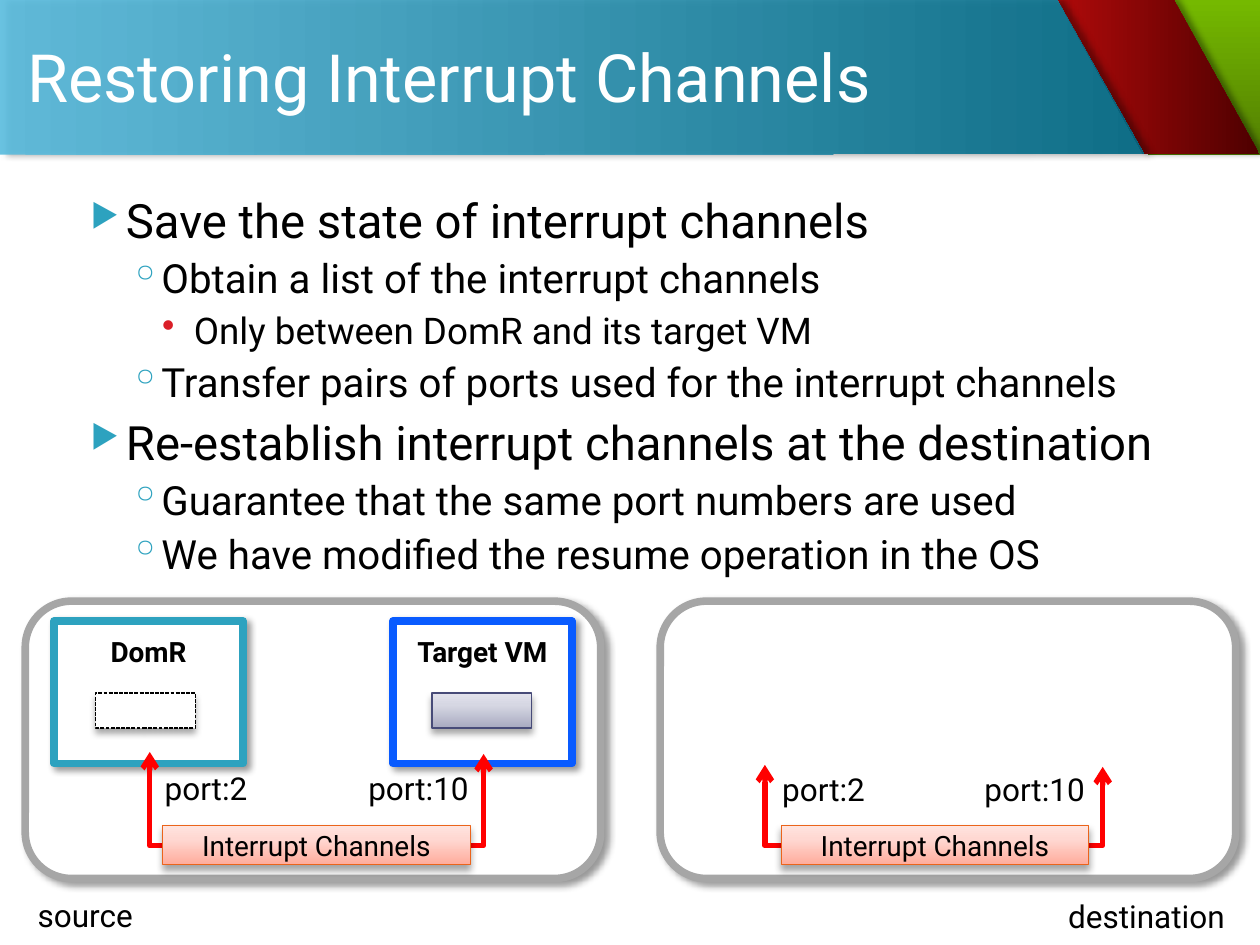
from typing import NamedTuple, Optional

from lxml import etree
from pptx import Presentation
from pptx.dml.color import RGBColor
from pptx.enum.dml import MSO_LINE
from pptx.enum.shapes import MSO_CONNECTOR as Conn, MSO_SHAPE as Shape
from pptx.enum.text import MSO_ANCHOR as Anchor, PP_ALIGN as Align
from pptx.oxml import parse_xml
from pptx.oxml.ns import nsdecls, qn
from pptx.util import Cm, Pt

FONT = "Roboto"
BLACK, WHITE = RGBColor(0x00, 0x00, 0x00), RGBColor(0xFF, 0xFF, 0xFF)
GREY, TEAL = RGBColor(0xA6, 0xA6, 0xA6), RGBColor(0x2D, 0xA2, 0xBF)
BLUE, INDIGO = RGBColor(0x09, 0x5B, 0xFF), RGBColor(0x47, 0x4B, 0x78)
RED, CRIMSON = RGBColor(0xFF, 0x00, 0x00), RGBColor(0xDA, 0x1F, 0x28)
ORANGE = RGBColor(0xEB, 0x64, 0x1B)

class Gradient(NamedTuple):
    stops: tuple  # (position %, hex colour)
    angle: int
    alpha: int = 100

class Shadow(NamedTuple):
    alpha: int
    angle: int

class Level(NamedTuple):
    size: float
    margin: float
    hang: float
    before: float
    bullet: str
    color: RGBColor
    bullet_pct: int = 100

class VM(NamedTuple):
    name: str
    left: float
    width: float
    color: RGBColor
    memory_left: float
    memory_fill: object
    memory_line: RGBColor
    dash: Optional[MSO_LINE] = None

class Channel(NamedTuple):
    box_left: float
    arrow_left: float
    arrow_right: float
    arrow_top: float
    port_left: float
    port_right: float
    port_top: float

GREEN_GRAD = Gradient(((0, "527E02"), (100, "75B900")), 270)
RED_GRAD = Gradient(((0, "AF0A0A"), (100, "4E0000")), 0)
BLUE_GRAD = Gradient(((0, "59BCDE"), (100, "006985")), 0, 90)
MEMORY_GRAD = Gradient(((0, "A8AAC0"), (65, "D6D7E3"), (100, "E2E2EC")), 270)
CHANNEL_GRAD = Gradient(((0, "FFAC9C"), (65, "FFD8D2"), (100, "FFE4DF")), 270)
BAND_SHADOW, FRAME_SHADOW, BOX_SHADOW = Shadow(40, 0), Shadow(40, 45), Shadow(35, 90)

LEVELS = (
    Level(27, 1.02, 0.71, 4, "▶", TEAL, 68),
    Level(23, 1.73, 0.64, 3.2, "◦", TEAL),
    Level(21, 2.39, 0.64, 3.5, "•", CRIMSON),
)
BODY = (
    (0, "Save the state of interrupt channels"),
    (1, "Obtain a list of the interrupt channels"),
    (2, "Only between DomR and its target VM"),
    (1, "Transfer pairs of ports used for the interrupt channels"),
    (0, "Re-establish interrupt channels at the destination"),
    (1, "Guarantee that the same port numbers are used"),
    (1, "We have modified the resume operation in the OS"),
)
HOST_LEFTS = (0.51, 13.31)
VMS = (
    VM("Target VM", 7.92, 3.61, BLUE, 8.71, MEMORY_GRAD, INDIGO),
    VM("DomR", 1.09, 3.81, TEAL, 1.93, WHITE, BLACK, MSO_LINE.SQUARE_DOT),
)
CHANNELS = (
    Channel(3.28, 3.02, 9.75, 15.16, 3.07, 9.7, 15.37),
    Channel(15.75, 15.42, 22.23, 15.42, 15.52, 22.12, 15.39),
)

def style(sp, fill, line=None, weight=0.75, dash=None, shadow=None):
    sp.fill.solid()
    if isinstance(fill, Gradient):
        stops = "".join(
            f'<a:gs pos="{pos * 1000}"><a:srgbClr val="{color}">'
            f'<a:alpha val="{fill.alpha * 1000}"/></a:srgbClr></a:gs>'
            for pos, color in fill.stops)
        solid = sp._element.spPr.find(qn("a:solidFill"))
        solid.getparent().replace(solid, parse_xml(
            f'<a:gradFill {nsdecls("a")} rotWithShape="1"><a:gsLst>{stops}</a:gsLst>'
            f'<a:lin ang="{fill.angle * 60000}" scaled="0"/></a:gradFill>'))
    else:
        sp.fill.fore_color.rgb = fill
    if line is None:
        sp.line.fill.background()
    else:
        sp.line.color.rgb, sp.line.width = line, Pt(weight)
        sp.line.dash_style = dash
    sp.shadow.inherit = False
    if shadow:
        sp._element.spPr.find(qn("a:effectLst")).append(parse_xml(
            f'<a:outerShdw {nsdecls("a")} blurRad="{Pt(4)}" dist="{Pt(3)}" '
            f'dir="{shadow.angle * 60000}" algn="ctr" rotWithShape="0"><a:srgbClr '
            f'val="000000"><a:alpha val="{shadow.alpha * 1000}"/></a:srgbClr></a:outerShdw>'))

def add_box(s, kind, left, top, width, height, **look):
    sp = s.shapes.add_shape(kind, Cm(left), Cm(top), Cm(width), Cm(height))
    style(sp, **look)
    return sp

def add_band(s, points, fill):
    start, *rest = [(Cm(x), Cm(y)) for x, y in points]
    builder = s.shapes.build_freeform(*start)
    builder.add_line_segments(rest, close=True)
    style(builder.convert_to_shape(), fill, shadow=BAND_SHADOW)

def write(p, text, size=18, color=BLACK, bold=False, align=Align.LEFT):
    p.alignment = align
    r = p.add_run()
    r.text = text
    r.font.name, r.font.size, r.font.bold = FONT, Pt(size), bold
    r.font.color.rgb = color

def add_text(s, text, left, top, width, height, wrap=True, anchor=Anchor.TOP, **fmt):
    tf = s.shapes.add_textbox(Cm(left), Cm(top), Cm(width), Cm(height)).text_frame
    tf.word_wrap, tf.vertical_anchor = wrap, anchor
    if text:
        write(tf.paragraphs[0], text, **fmt)
    return tf

def add_body(s):
    tf = add_text(s, "", 1.27, 3.73, 24.13, 14.81)
    for i, (depth, text) in enumerate(BODY):
        p = tf.add_paragraph() if i else tf.paragraphs[0]
        level = LEVELS[depth]
        write(p, text, size=level.size)
        p.level, p.space_before = depth, Pt(level.before)
        pPr = p._p.get_or_add_pPr()
        pPr.set("marL", str(Cm(level.margin)))
        pPr.set("indent", str(-Cm(level.hang)))
        color = etree.SubElement(pPr, qn("a:buClr"))
        etree.SubElement(color, qn("a:srgbClr"), val=str(level.color))
        etree.SubElement(pPr, qn("a:buSzPct"), val=str(level.bullet_pct * 1000))
        etree.SubElement(pPr, qn("a:buChar"), char=level.bullet)

def add_vm(s, vm: VM):
    add_box(s, Shape.RECTANGLE, vm.left, 12.52, vm.width, 2.87,
            fill=WHITE, line=vm.color, weight=4.33, shadow=FRAME_SHADOW)
    add_text(s, vm.name, vm.left, 12.67, vm.width, 0.94,
             size=16, bold=True, align=Align.CENTER)
    add_box(s, Shape.RECTANGLE, vm.memory_left, 13.97, 2.01, 0.71, fill=vm.memory_fill,
            line=vm.memory_line, dash=vm.dash, shadow=BOX_SHADOW)

def add_u_arrow(s, left, right, top, bottom):
    """Elbow line turned a quarter: down, across and up, with both ends pointing up."""
    rise, span = 0.04, right - left
    x, y = (left + right - rise) / 2, top + (rise - span) / 2
    cxn = s.shapes.add_connector(Conn.ELBOW, Cm(x + rise), Cm(y), Cm(x), Cm(y + span))
    cxn.line.color.rgb, cxn.line.width = RED, Pt(3)
    spPr = cxn._element.spPr
    spPr.find(qn("a:xfrm")).set("rot", str(270 * 60000))
    guides = spPr.find(qn("a:prstGeom")).find(qn("a:avLst"))
    bend = round((bottom - top) / rise * 100000)
    etree.SubElement(guides, qn("a:gd"), name="adj1", fmla=f"val {bend}")
    for end in ("a:headEnd", "a:tailEnd"):
        etree.SubElement(spPr.find(qn("a:ln")), qn(end), type="arrow")
    etree.SubElement(spPr, qn("a:effectLst"))

def add_channel(s, ch: Channel):
    add_u_arrow(s, ch.arrow_left, ch.arrow_right, ch.arrow_top, 17.05)
    sp = add_box(s, Shape.RECTANGLE, ch.box_left, 16.64, 6.2, 0.79,
                 fill=CHANNEL_GRAD, line=ORANGE, shadow=BOX_SHADOW)
    sp.text_frame.vertical_anchor = Anchor.MIDDLE
    write(sp.text_frame.paragraphs[0], "Interrupt Channels", size=16, align=Align.CENTER)
    add_text(s, "port:2", ch.port_left, ch.port_top, 2.24, 1.02, wrap=False)
    add_text(s, "port:10", ch.port_right - 2.8, ch.port_top, 2.8, 1.02, align=Align.RIGHT)

prs = Presentation()
prs.slide_width, prs.slide_height = Cm(25.4), Cm(19.05)
s = prs.slides.add_slide(prs.slide_layouts[6])
add_box(s, Shape.RECTANGLE, 23.14, 0, 2.26, 3.12, fill=GREEN_GRAD)
add_band(s, ((23.65, -0.02), (25.38, 3.1), (23.04, 3.1), (21.31, -0.02)), RED_GRAD)
add_band(s, ((23.06, 3.1), (0, 3.12), (0, 0), (21.31, 0)), BLUE_GRAD)
add_text(s, "Restoring Interrupt Channels", 0.3, -0.02, 25.1, 3.12,
         anchor=Anchor.MIDDLE, size=38, color=WHITE)
add_body(s)
for left in HOST_LEFTS:
    add_box(s, Shape.ROUNDED_RECTANGLE, left, 12.12, 11.6, 5.59,
            fill=WHITE, line=GREY, weight=4.33, shadow=FRAME_SHADOW)
for vm in VMS:
    add_vm(s, vm)
for channel in CHANNELS:
    add_channel(s, channel)
add_text(s, "source", 0.51, 17.93, 4.39, 1.02)
add_text(s, "destination", 19.23, 17.96, 5.71, 1.02, align=Align.RIGHT)
prs.save("out.pptx")
